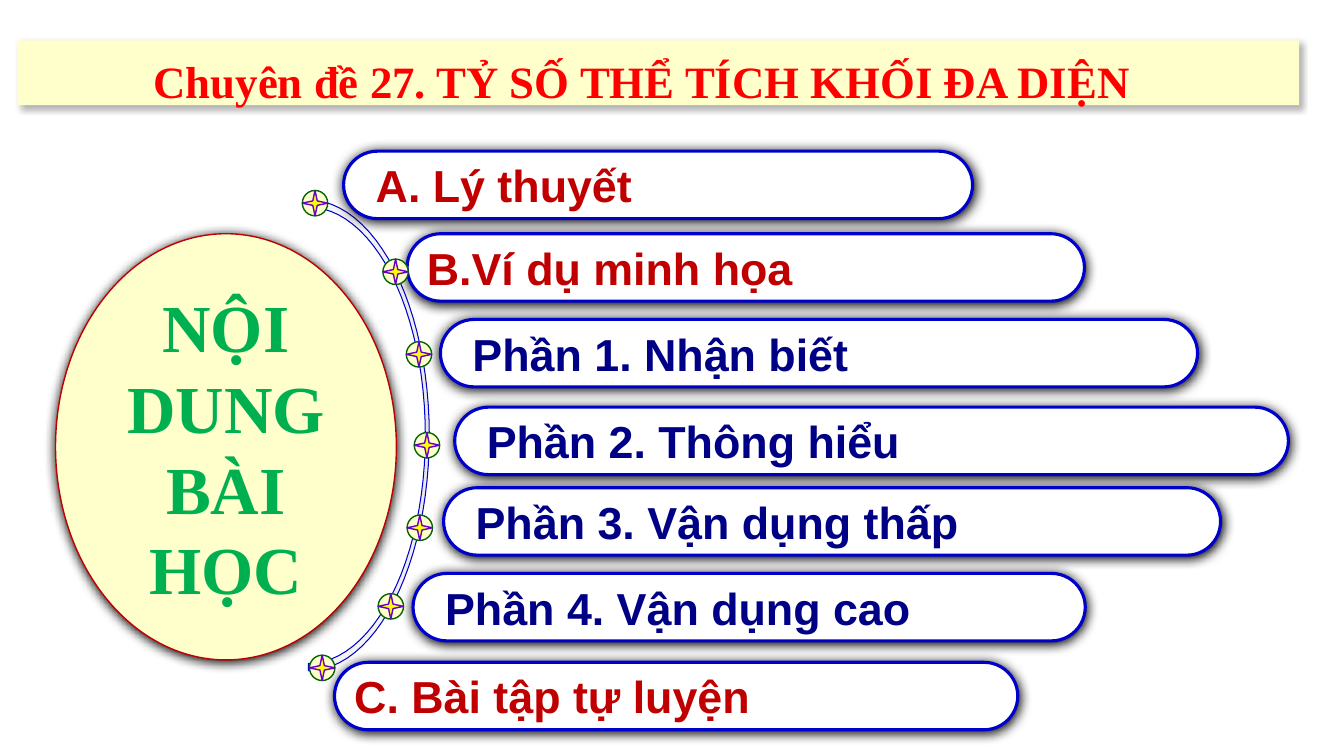
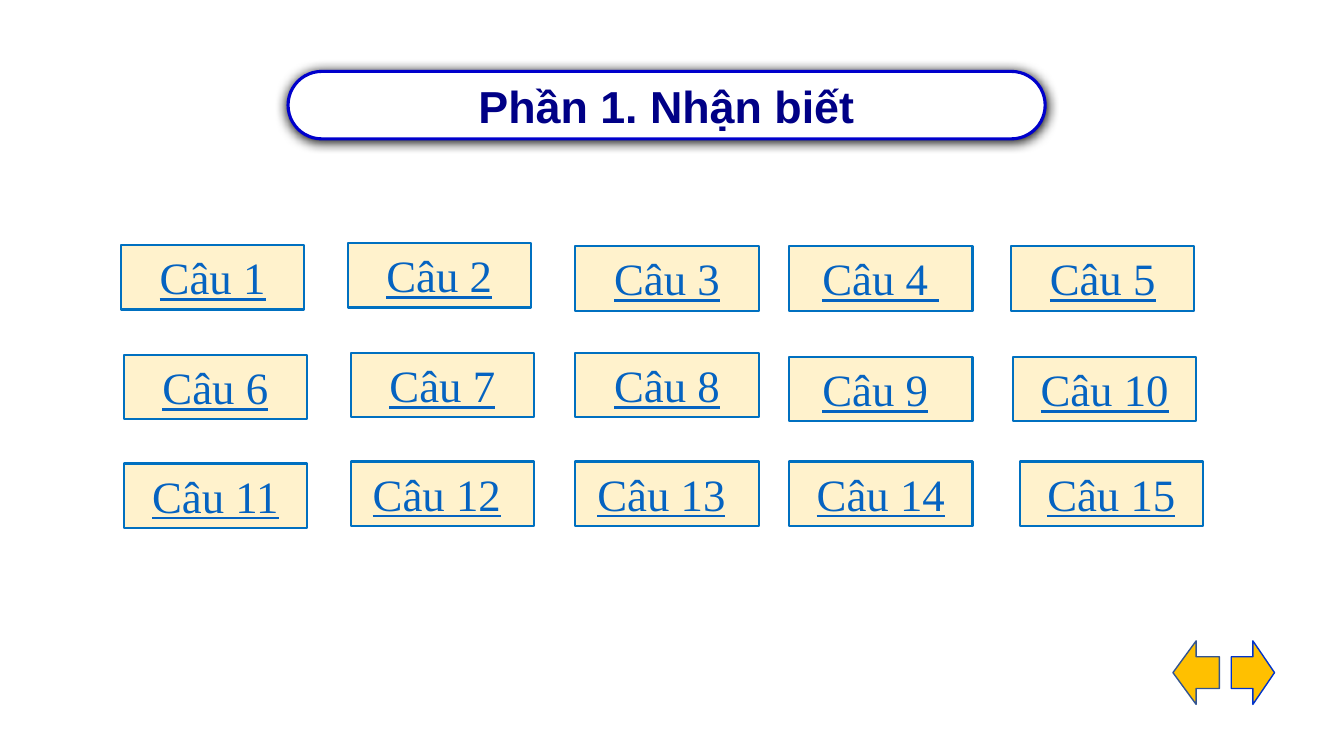
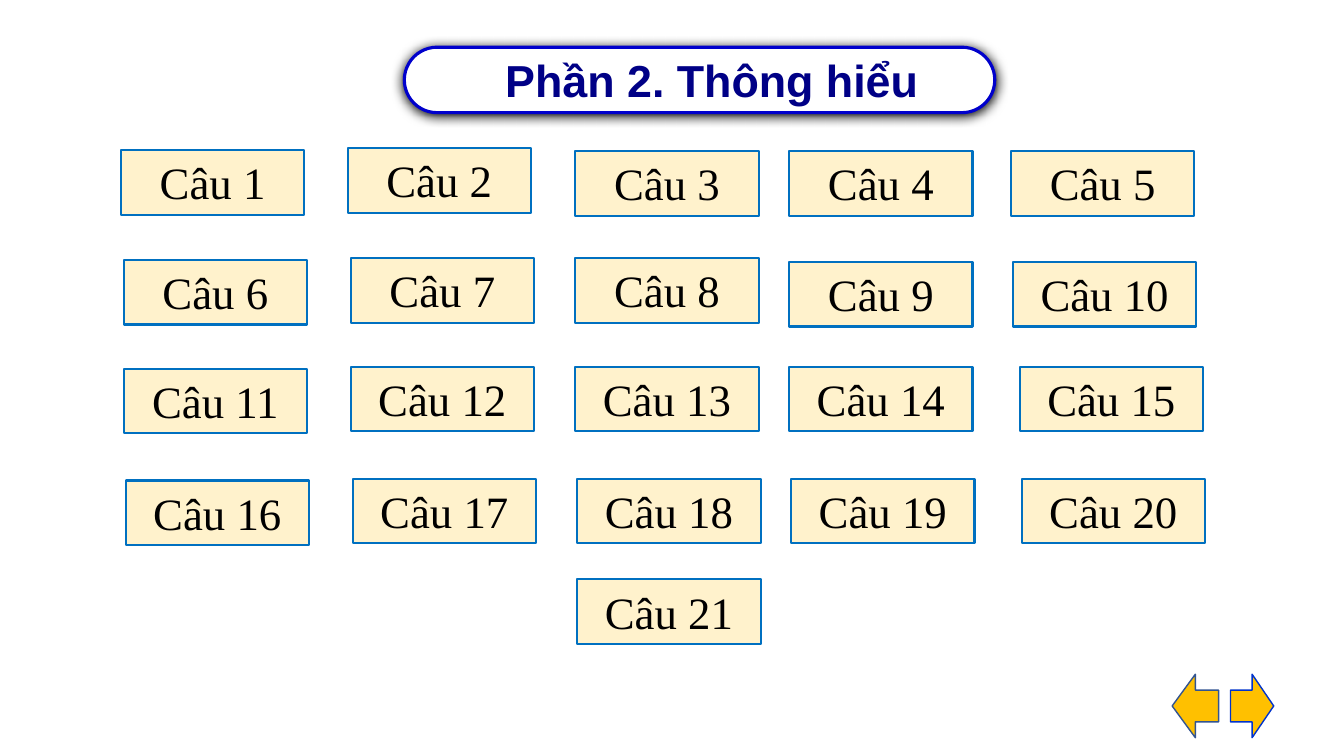
from math import cos, pi, sin

from lxml import etree
from pptx import Presentation
from pptx.dml.color import RGBColor
from pptx.enum.shapes import MSO_SHAPE
from pptx.enum.text import MSO_ANCHOR, MSO_AUTO_SIZE, PP_ALIGN
from pptx.oxml.ns import qn
from pptx.util import Cm, Pt

RECTANGLE = MSO_SHAPE.RECTANGLE
ROUNDED = MSO_SHAPE.ROUNDED_RECTANGLE
OVAL = MSO_SHAPE.OVAL
STAR = MSO_SHAPE.STAR_4_POINT
LEFT_ARROW = MSO_SHAPE.LEFT_ARROW
RIGHT_ARROW = MSO_SHAPE.RIGHT_ARROW
LEFT, CENTER = PP_ALIGN.LEFT, PP_ALIGN.CENTER
TOP, MIDDLE = MSO_ANCHOR.TOP, MSO_ANCHOR.MIDDLE
GROW = MSO_AUTO_SIZE.SHAPE_TO_FIT_TEXT

SANS, SERIF = "Arial", "Times New Roman"
BLACK, WHITE, CREAM = "000000", "FFFFFF", "FFFFCC"
RED, DARK_RED, GREEN = "FF0000", "C00000", "00B050"
NAVY, BLUE, LINK = "000086", "0000CC", "0563C1"
CARD, CARD_EDGE, AMBER = "FFF2CC", "0070C0", "FFC000"
INSET = 0.25
GLOW = (100, 8.5, 1, 90)
SOFT = (30, 4.5, 2.6, 53)

TOPICS = [
    ("A. Lý thuyết", DARK_RED, 8.66, 3.81, 15.85, 0.31),
    ("B.Ví dụ minh họa", DARK_RED, 10.26, 5.89, 17.07, 0),
    ("Phần 1. Nhận biết", NAVY, 11.1, 8.05, 19.08, 0.31),
    ("Phần 2. Thông hiểu", NAVY, 11.46, 10.26, 21.01, 0.31),
    ("Phần 3. Vận dụng thấp", NAVY, 11.18, 12.29, 19.58, 0.31),
    ("Phần 4. Vận dụng cao", NAVY, 10.41, 14.45, 16.94, 0.31),
    ("C. Bài tập tự luyện", DARK_RED, 8.43, 16.69, 17.22, 0),
]
BEADS = [(7.62, 4.8), (9.65, 6.53), (10.24, 8.61), (10.44, 10.9),
         (10.26, 12.98), (9.53, 14.96), (7.8, 16.51)]

THIRD_ROW = [(3.12, 5.56), (8.84, 5.51), (14.5, 5.51), (19.89, 5.51), (25.7, 5.51)]
CARD_PLACES = [
    (3.05, 0.05), (8.76, 0), (14.5, 0.08), (19.89, 0.08), (25.48, 0.08),
    (3.12, 2.82), (8.84, 2.77), (14.5, 2.77), (19.89, 2.87), (25.53, 2.87),
    *THIRD_ROW,
    *[(left + 0.05, top + 2.82) for left, top in THIRD_ROW],
    (14.55, 10.87),
]


def color(value):
    return RGBColor.from_string(value)


class Deck:
    def __init__(self):
        self.presentation = Presentation()
        self.presentation.slide_width = Cm(33.87)
        self.presentation.slide_height = Cm(19.05)
        self.slide = None

    def new_slide(self):
        self.slide = self.presentation.slides.add_slide(self.presentation.slide_layouts[6])

    def shape(self, kind, left, top, width, height, fill, edge=None, weight=1, shadow=None,
              parent=None):
        shapes = (parent or self.slide).shapes
        shape = shapes.add_shape(kind, Cm(left), Cm(top), Cm(width), Cm(height))
        shape.fill.solid()
        shape.fill.fore_color.rgb = color(fill)
        self.outline(shape, edge, weight)
        if shadow:
            self.cast_shadow(shape, *shadow)
        return shape

    def outline(self, shape, edge, weight):
        shape.shadow.inherit = False
        if edge:
            shape.line.color.rgb = color(edge)
            shape.line.width = Pt(weight)
        else:
            shape.line.fill.background()

    def cast_shadow(self, shape, opacity, blur, distance, angle):
        effects = shape._element.spPr.find(qn("a:effectLst"))
        outer = etree.SubElement(
            effects, qn("a:outerShdw"), blurRad=str(Pt(blur)), dist=str(Pt(distance)),
            dir=str(angle * 60000), algn="ctr", rotWithShape="0")
        tint = etree.SubElement(outer, qn("a:srgbClr"), val=BLACK)
        etree.SubElement(tint, qn("a:alpha"), val=str(opacity * 1000))

    def add_text(self, shape, text, font, size, ink, bold=False, underline=False,
                 align=CENTER, anchor=MIDDLE, wrap=True):
        frame = shape.text_frame
        frame.word_wrap = wrap
        frame.vertical_anchor = anchor
        paragraph = frame.paragraphs[0]
        paragraph.alignment = align
        run = paragraph.add_run()
        run.text = text
        run.font.name = font
        run.font.size = Pt(size)
        run.font.bold = bold
        run.font.underline = underline
        run.font.color.rgb = color(ink)

    def banner(self, text):
        self.shape(RECTANGLE, 0.46, 1.02, 32.28, 1.63, CREAM, shadow=SOFT)
        box = self.slide.shapes.add_textbox(Cm(0.84), Cm(1.22), Cm(30.68), Cm(1.63))
        self.add_text(box, text, SERIF, 32, RED, bold=True, anchor=TOP)
        box.text_frame.auto_size = GROW

    def pill(self, text, ink, left, top, width, indent=0, height=1.7, align=LEFT):
        pill = self.shape(ROUNDED, left, top, width, height, WHITE, BLUE, 2.25, GLOW)
        pill.adjustments[0] = 0.5
        self.add_text(pill, text, SANS, 32, ink, bold=True, align=align, wrap=False)
        pill.text_frame.margin_left = Cm(INSET + indent)

    def hub(self, text):
        hub = self.shape(OVAL, 1.4, 5.89, 8.59, 10.74, CREAM, DARK_RED, shadow=GLOW)
        self.add_text(hub, text, SERIF, 48, GREEN, bold=True)

    def bead(self, left, top):
        group = self.slide.shapes.add_group_shape()
        for kind, fill, edge in ((OVAL, CREAM, "006600"), (STAR, "FFFF00", "6600CC")):
            self.shape(kind, left, top, 0.64, 0.64, fill, edge, parent=group)

    def arc_band(self, center_x, center_y, outer, inner, steps=48):
        angles = [pi * step / steps - pi / 2 for step in range(steps + 1)]
        points = [
            (Cm(center_x + radius_x * cos(angle)), Cm(center_y + radius_y * sin(angle)))
            for (radius_x, radius_y), sweep in ((outer, angles), (inner, angles[::-1]))
            for angle in sweep
        ]
        builder = self.slide.shapes.build_freeform(*points[0])
        builder.add_line_segments(points[1:], close=True)
        band = builder.convert_to_shape()
        band.fill.gradient()
        band.fill.gradient_angle = 90
        stops = band._element.spPr.find(qn("a:gradFill")).find(qn("a:gsLst"))
        for stop in list(stops):
            stops.remove(stop)
        for position, tint in ((0, "F4F4F4"), (50, "E7E6E6"), (100, "F4F4F4")):
            stop = etree.SubElement(stops, qn("a:gs"), pos=str(position * 1000))
            etree.SubElement(stop, qn("a:srgbClr"), val=tint)
        self.outline(band, BLUE, 0.75)

    def cards(self, count, top, ink, underline=False, labels=None, nudged=()):
        for number, (left, offset) in enumerate(CARD_PLACES[:count], 1):
            card = self.shape(RECTANGLE, left, top + offset, 4.62, 1.63, CARD, CARD_EDGE, 1.5)
            text = (labels or {}).get(number, f"Câu {number}")
            self.add_text(card, text, SERIF, 32, ink, underline=underline, anchor=TOP)
            card.text_frame.auto_size = GROW
            if number in nudged:
                card.text_frame.margin_right = Cm(INSET + 0.28)

    def arrows(self, left, top):
        self.shape(LEFT_ARROW, left, top, 1.17, 1.6, AMBER, "325491")
        self.shape(RIGHT_ARROW, left + 1.47, top, 1.09, 1.6, AMBER, "0033CC")


def main():
    deck = Deck()

    deck.new_slide()
    deck.banner("Chuyên đề 27. TỶ SỐ THỂ TÍCH KHỐI ĐA DIỆN")
    deck.arc_band(7.77, 10.97, (3.05, 5.93), (2.95, 5.75))
    for topic in TOPICS:
        deck.pill(*topic)
    deck.hub("NỘI DUNG BÀI HỌC")
    for place in BEADS:
        deck.bead(*place)

    deck.new_slide()
    deck.pill("Phần 1. Nhận biết", NAVY, 7.26, 1.8, 19.08, align=CENTER)
    deck.cards(15, 6.12, LINK, underline=True, labels={4: "Câu 4 "}, nudged=(9, 12, 13))
    deck.arrows(29.56, 16.15)

    deck.new_slide()
    deck.pill("Phần 2. Thông hiểu", NAVY, 10.19, 1.19, 14.88, indent=0.63, height=1.65,
              align=CENTER)
    deck.cards(21, 3.73, BLACK)
    deck.arrows(29.54, 16.99)

    deck.presentation.save("out.pptx")


if __name__ == "__main__":
    main()
